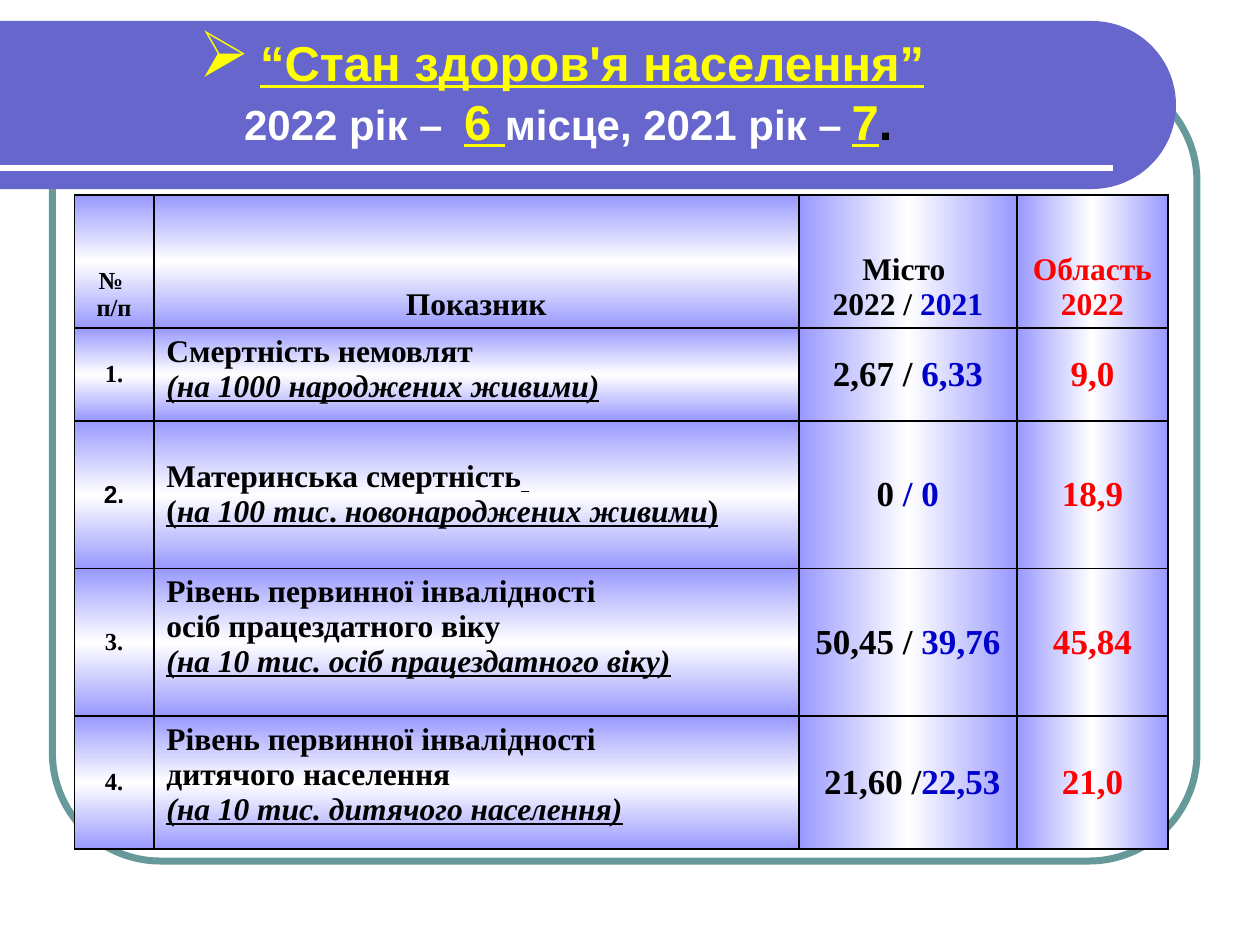
import math

from pptx import Presentation
from pptx import util as u
from pptx.dml.color import RGBColor
from pptx.enum import shapes, text
from pptx.oxml import parse_xml
from pptx.oxml.ns import nsdecls

COLORS = {"band": "6666CC", "frame": "669999", "white": "FFFFFF", "black": "000000",
          "yellow": "FFFF00", "blue": "0000CC", "red": "FF0000", "cell": "9999FF"}
SERIF, SANS = "Times New Roman", "Arial"
CENTER, LEFT = text.PP_ALIGN.CENTER, text.PP_ALIGN.LEFT
TOP, MIDDLE, BOTTOM = (text.MSO_ANCHOR.TOP, text.MSO_ANCHOR.MIDDLE,
                       text.MSO_ANCHOR.BOTTOM)


def color(name):
    return RGBColor.from_string(COLORS[name])


def xml(tag, content, attributes=""):
    return parse_xml(f"<a:{tag} {nsdecls('a')} {attributes}>{content}</a:{tag}>")


def solid(name):
    return f'<a:srgbClr val="{COLORS[name]}"/>'


class SlideBuilder:
    def __init__(self, slide):
        self.slide = slide
        self.shapes = slide.shapes

    def add_text(self, frame, paragraphs, align, font=SERIF):
        """Each paragraph is a list of runs: (text, size, color, style letters)."""
        for index, runs in enumerate(paragraphs):
            paragraph = frame.paragraphs[0] if index == 0 else frame.add_paragraph()
            paragraph.alignment = align
            for words, size, name, style in runs:
                run = paragraph.add_run()
                run.text = words
                run.font.name = font
                run.font.size = u.Pt(size)
                run.font.bold = True
                run.font.italic = "i" in style
                run.font.underline = "u" in style
                run.font.color.rgb = color(name)

    def frame(self, left, top, width, height, radius):
        shape = self.shapes.add_shape(shapes.MSO_SHAPE.ROUNDED_RECTANGLE, u.Pt(left),
                                      u.Pt(top), u.Pt(width), u.Pt(height))
        shape.adjustments[0] = radius
        shape.shadow.inherit = False
        shape.fill.background()
        shape.line.color.rgb = color("frame")
        shape.line.width = u.Pt(4)

    def band(self, top, center_x, radius, steps=48):
        arc = []
        for step in range(steps + 1):
            angle = math.pi * step / steps
            arc.append((u.Pt(center_x + radius * math.sin(angle)),
                        u.Pt(top + radius - radius * math.cos(angle))))
        builder = self.shapes.build_freeform(0, u.Pt(top))
        builder.add_line_segments(arc + [(0, u.Pt(top + 2 * radius))], close=True)
        shape = builder.convert_to_shape()
        shape.shadow.inherit = False
        shape.fill.solid()
        shape.fill.fore_color.rgb = color("band")
        shape.line.fill.background()

    def rule(self, left, right, y):
        line = self.shapes.add_connector(shapes.MSO_CONNECTOR.STRAIGHT, u.Pt(left),
                                         u.Pt(y), u.Pt(right), u.Pt(y))
        line.line.color.rgb = color("white")
        line.line.width = u.Pt(3)
        line._element.spPr.append(xml("effectLst", ""))

    def title(self, left, top, width, height, paragraphs):
        title = self.shapes.title
        title.left, title.top = u.Pt(left), u.Pt(top)
        title.width, title.height = u.Pt(width), u.Pt(height)
        frame = title.text_frame
        frame.word_wrap = True
        frame.auto_size = text.MSO_AUTO_SIZE.NONE
        frame.vertical_anchor = TOP
        self.add_text(frame, paragraphs, CENTER, SANS)
        # Large arrow bullet on the first line
        properties = frame.paragraphs[0]._p.get_or_add_pPr()
        properties.append(xml("buClr", solid("yellow")))
        properties.append(xml("buSzPct", "", 'val="185000"'))
        properties.append(xml("buChar", "", 'char="➢"'))
        # Bring the title in front of the band
        self.shapes._spTree.append(title._element)

    def style_cell(self, cell, angle):
        properties = cell._tc.get_or_add_tcPr()
        for side in ("lnL", "lnR", "lnT", "lnB"):
            properties.append(xml(side, f"<a:solidFill>{solid('black')}</a:solidFill>",
                                  'w="12700"'))
        stops = "".join(f'<a:gs pos="{position}">{solid(name)}</a:gs>' for position, name
                        in ((0, "cell"), (50000, "white"), (100000, "cell")))
        properties.append(xml("gradFill", f"<a:gsLst>{stops}</a:gsLst>"
                              f'<a:lin ang="{angle * 60000}" scaled="1"/>'))

    def table(self, left, top, widths, heights, rows):
        """Each cell is (paragraphs, alignment, anchor, font)."""
        table = self.shapes.add_table(len(heights), len(widths), u.Pt(left), u.Pt(top),
                                      u.Pt(sum(widths)), u.Pt(sum(heights))).table
        for column, width in zip(table.columns, widths):
            column.width = u.Pt(width)
        for row, height, contents in zip(table.rows, heights, rows):
            row.height = u.Pt(height)
            for index, (paragraphs, align, anchor, font) in enumerate(contents):
                cell = row.cells[index]
                cell.vertical_anchor = anchor
                self.add_text(cell.text_frame, paragraphs, align, font)
                self.style_cell(cell, 90 if index < 2 else 0)


def header_cell(*paragraphs):
    return paragraphs, CENTER, BOTTOM, SERIF


def indicator_row(number, lines, city, previous, region, anchor=TOP, font=SERIF):
    return [
        ([[(number, 14, "black", "")]], CENTER, MIDDLE, font),
        ([[(words, 18, "black", style) for words, style in line] for line in lines],
         LEFT, anchor, SERIF),
        ([[(city, 20, "black", ""), (previous, 20, "blue", "")]], CENTER, MIDDLE, SERIF),
        ([[(region, 20, "red", "")]], CENTER, MIDDLE, SERIF),
    ]


TITLE = [
    [(" ", 20, "black", ""), ("“Стан здоров'я населення”", 28, "yellow", "u"),
     (" ", 28, "yellow", "")],
    [("2022 рік – ", 24, "white", ""), (" ", 20, "white", ""), ("6 ", 28, "yellow", "u"),
     ("місце, 2021 рік –", 24, "white", ""), (" ", 20, "white", ""),
     ("7", 28, "yellow", "u"), (".", 28, "black", "")],
]

ROWS = [
    [header_cell([("№ ", 14, "black", "")], [("п/п", 14, "black", "")]),
     header_cell([("Показник", 18, "black", "")]),
     header_cell([("Місто ", 18, "black", "")],
                 [("2022 / ", 18, "black", ""), ("2021", 18, "blue", "")]),
     header_cell([("Область", 18, "red", "")], [("2022", 18, "red", "")])],
    indicator_row("1.", [[("Смертність немовлят", "")],
                         [("(на 1000 народжених живими)", "iu")]],
                  "2,67 / ", "6,33", "9,0"),
    indicator_row("2.", [[("Материнська смертність", ""), (" ", "u")],
                         [("(", "u"), ("на", "iu"), (" ", "u"), ("100", "iu"),
                          (" ", "u"), ("тис", "iu"), (". ", "u"),
                          ("новонароджених", "iu"), (" ", "u"), ("живими", "iu"),
                          (")", "u")]],
                  "0 ", "/ 0", "18,9", MIDDLE, SANS),
    indicator_row("3.", [[("Рівень первинної інвалідності", "")],
                         [("осіб працездатного віку", "")],
                         [("(на 10 тис. осіб працездатного віку)", "iu")]],
                  "50,45 / ", "39,76", "45,84"),
    indicator_row("4.", [[("Рівень первинної інвалідності", "")],
                         [("дитячого населення", "")],
                         [("(на 10 тис. дитячого населення)", "iu")]],
                  " 21,60 /", "22,53", "21,0"),
]


def main():
    presentation = Presentation()
    presentation.slide_width, presentation.slide_height = u.Pt(720), u.Pt(540)
    builder = SlideBuilder(presentation.slides.add_slide(presentation.slide_layouts[5]))

    # Backdrop: frame, title band and rule
    builder.frame(30, 42, 654, 450, 0.137)
    builder.band(12, 624, 48)
    builder.rule(0, 636, 96)

    # Indicators and heading
    builder.table(42.5, 111.5, [45.4, 368.6, 124.6, 86.4], [76, 53, 84.4, 84.4, 76], ROWS)
    builder.title(0, 15, 649.5, 74, TITLE)

    presentation.save("out.pptx")


if __name__ == "__main__":
    main()
